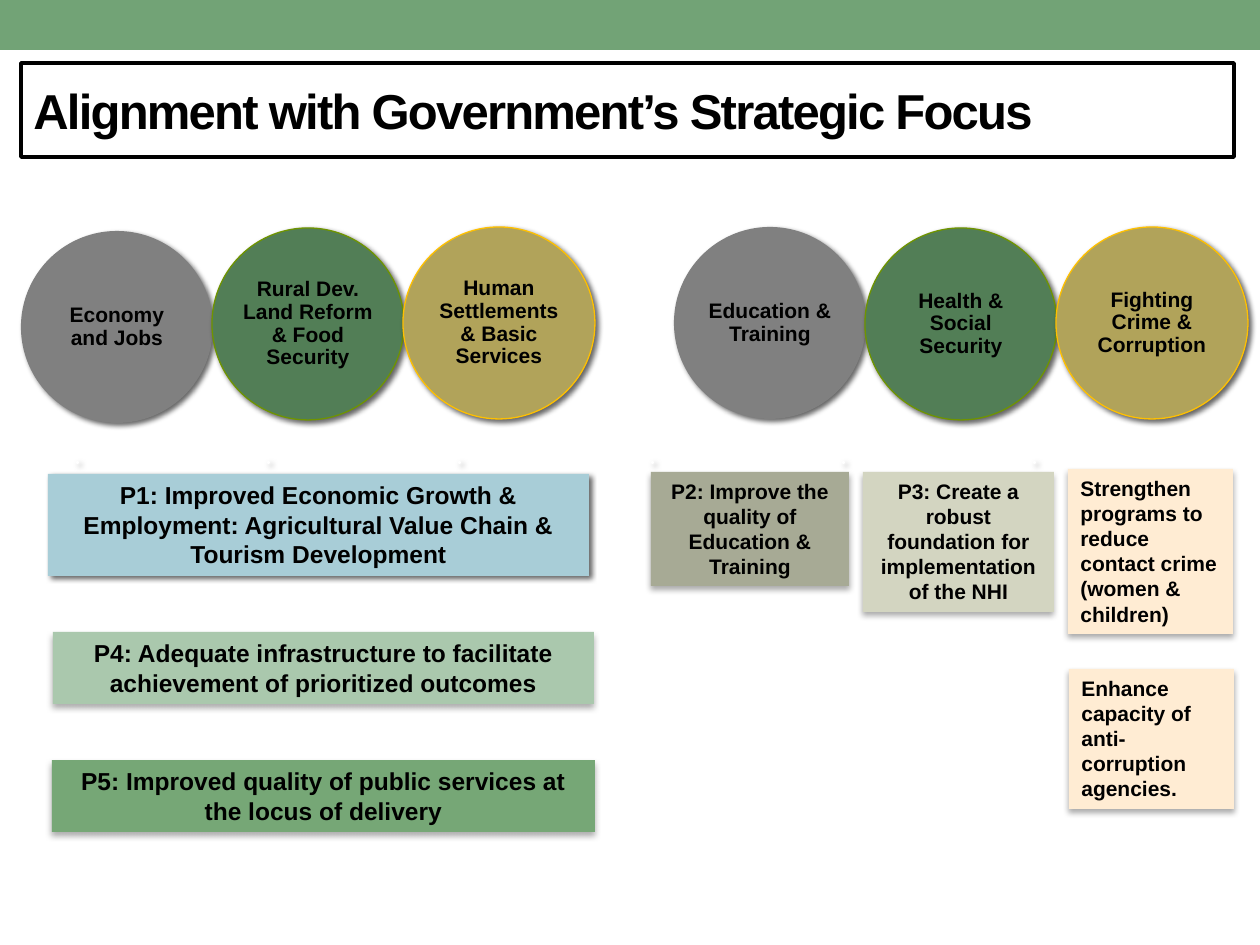
from lxml import etree
from pptx import Presentation
from pptx.dml.color import RGBColor
from pptx.enum.shapes import MSO_SHAPE
from pptx.enum.text import MSO_ANCHOR, MSO_AUTO_SIZE, PP_ALIGN
from pptx.oxml.ns import qn
from pptx.util import Emu, Pt

RECT, OVAL = MSO_SHAPE.RECTANGLE, MSO_SHAPE.OVAL
LEFT, CENTER = PP_ALIGN.LEFT, PP_ALIGN.CENTER
TOP, MIDDLE = MSO_ANCHOR.TOP, MSO_ANCHOR.MIDDLE
GROW, FIXED = MSO_AUTO_SIZE.SHAPE_TO_FIT_TEXT, MSO_AUTO_SIZE.NONE
SCALE = 914400 / 126  # EMU per px

COLORS = {
    "band": "72A376", "white": "FFFFFF", "black": "000000",
    "gray": "808080", "green": "527E56", "gold": "B1A35A",
    "green_edge": "6F9400", "gold_edge": "FFC000", "speck": "DCEACC",
    "blue": "A8CDD7", "mint": "AAC8AD", "leaf": "76A776",
    "olive": "A7AA95", "sage": "D3D5C1", "peach": "FFECD3",
}
# Shadows: opacity %, blur pt, distance pt, direction in degrees
SOFT = (32, 3.5, 2.2, 90)
STRONG = (60, 3, 2, 45)


def add_block(kind, box, fill, edge=None, edge_width=0.75, shadow=None):
    block = slide.shapes.add_shape(kind, *(Emu(round(v * SCALE)) for v in box))
    block.fill.solid()
    block.fill.fore_color.rgb = RGBColor.from_string(COLORS[fill])
    if edge:
        block.line.color.rgb = RGBColor.from_string(COLORS[edge])
        block.line.width = Pt(edge_width)
    else:
        block.line.fill.background()
    block.shadow.inherit = False
    if shadow:
        opacity, blur, distance, degrees = shadow
        effects = block._element.spPr.find(qn("a:effectLst"))
        outer = etree.SubElement(
            effects, qn("a:outerShdw"), blurRad=str(Pt(blur)),
            dist=str(Pt(distance)), dir=str(degrees * 60000),
            algn="ctr", rotWithShape="0")
        color = etree.SubElement(outer, qn("a:srgbClr"), val=COLORS["black"])
        etree.SubElement(color, qn("a:alpha"), val=str(opacity * 1000))
    return block


def write(block, text, size, align, anchor, frame_format):
    frame = block.text_frame
    settings = {"word_wrap": True, "vertical_anchor": anchor, **frame_format}
    for name, value in settings.items():
        setattr(frame, name, value)
    paragraph = frame.paragraphs[0]
    paragraph.alignment = align
    run = paragraph.add_run()
    run.text = text
    for name, value in {"name": "Arial", "size": Pt(size), "bold": True}.items():
        setattr(run.font, name, value)
    run.font.color.rgb = RGBColor.from_string(COLORS["black"])
    return paragraph


prs = Presentation()
prs.slide_width, prs.slide_height = Emu(round(1260 * SCALE)), Emu(round(945 * SCALE))
slide = prs.slides.add_slide(prs.slide_layouts[6])

# Top band and title
add_block(RECT, (0, 0, 1260, 50), "band")
title = add_block(RECT, (21, 63, 1213, 94), "white", "black", 2.08)
heading = write(title, "Alignment with Government’s Strategic Focus", 28, LEFT, MIDDLE,
                {"auto_size": FIXED})
heading.runs[0].font._element.set("spc", "-100")

# Focus areas: two groups of three touching circles, each with a small speck below
CIRCLE, STEP = 192, 191
circle_colors = [("gray", None), ("green", "green_edge"), ("gold", "gold_edge")]
focus_groups = [
    (21, 56, [("Economy and Jobs", 231),
              ("Rural Dev. Land Reform & Food Security", 228),
              ("Human Settlements & Basic Services", 227)]),
    (674, -22, [("Education & Training", 227),
                ("Health & Social Security", 228),
                ("Fighting Crime & Corruption", 227)]),
]
no_margins = {f"margin_{side}": 0 for side in ("left", "top", "right", "bottom")}
for group_left, speck_offset, areas in focus_groups:
    for i, ((area, top), (fill, edge)) in enumerate(zip(areas, circle_colors)):
        left = group_left + i * STEP
        speck = add_block(RECT, (left + speck_offset, 462, 1, 1), "speck", "white",
                          shadow=STRONG)
        speck_color = speck._element.spPr.find(qn("a:solidFill"))[0]
        etree.SubElement(speck_color, qn("a:alpha"), val="90000")
        circle = add_block(OVAL, (left, top, CIRCLE, CIRCLE), fill, edge, shadow=STRONG)
        label = write(circle, area, 12, CENTER, MIDDLE, no_margins)
        label.line_spacing = 0.9

# Priorities and programs
priorities = [
    ("P1: Improved Economic Growth & Employment: Agricultural Value Chain & "
     "Tourism Development", (48, 474, 541, 102), "blue", STRONG, 14, CENTER),
    ("P4: Adequate infrastructure to facilitate achievement of prioritized outcomes",
     (53, 632, 541, 72), "mint", SOFT, 14, CENTER),
    ("P5: Improved quality of public services at the locus of delivery",
     (52, 760, 543, 72), "leaf", SOFT, 14, CENTER),
    ("P2: Improve the quality of Education & Training",
     (651, 472, 198, 114), "olive", SOFT, 12, CENTER),
    ("P3: Create a robust foundation for implementation of the NHI",
     (863, 472, 191, 140), "sage", SOFT, 12, CENTER),
    ("Strengthen programs to reduce contact crime (women & children)",
     (1068, 469, 165, 165), "peach", SOFT, 12, LEFT),
    ("Enhance capacity of anti-corruption agencies.",
     (1069, 669, 165, 140), "peach", SOFT, 12, LEFT),
]
for text, box, fill, shadow, size, align in priorities:
    priority = add_block(RECT, box, fill, shadow=shadow)
    write(priority, text, size, align, TOP, {"auto_size": GROW})

prs.save("out.pptx")
